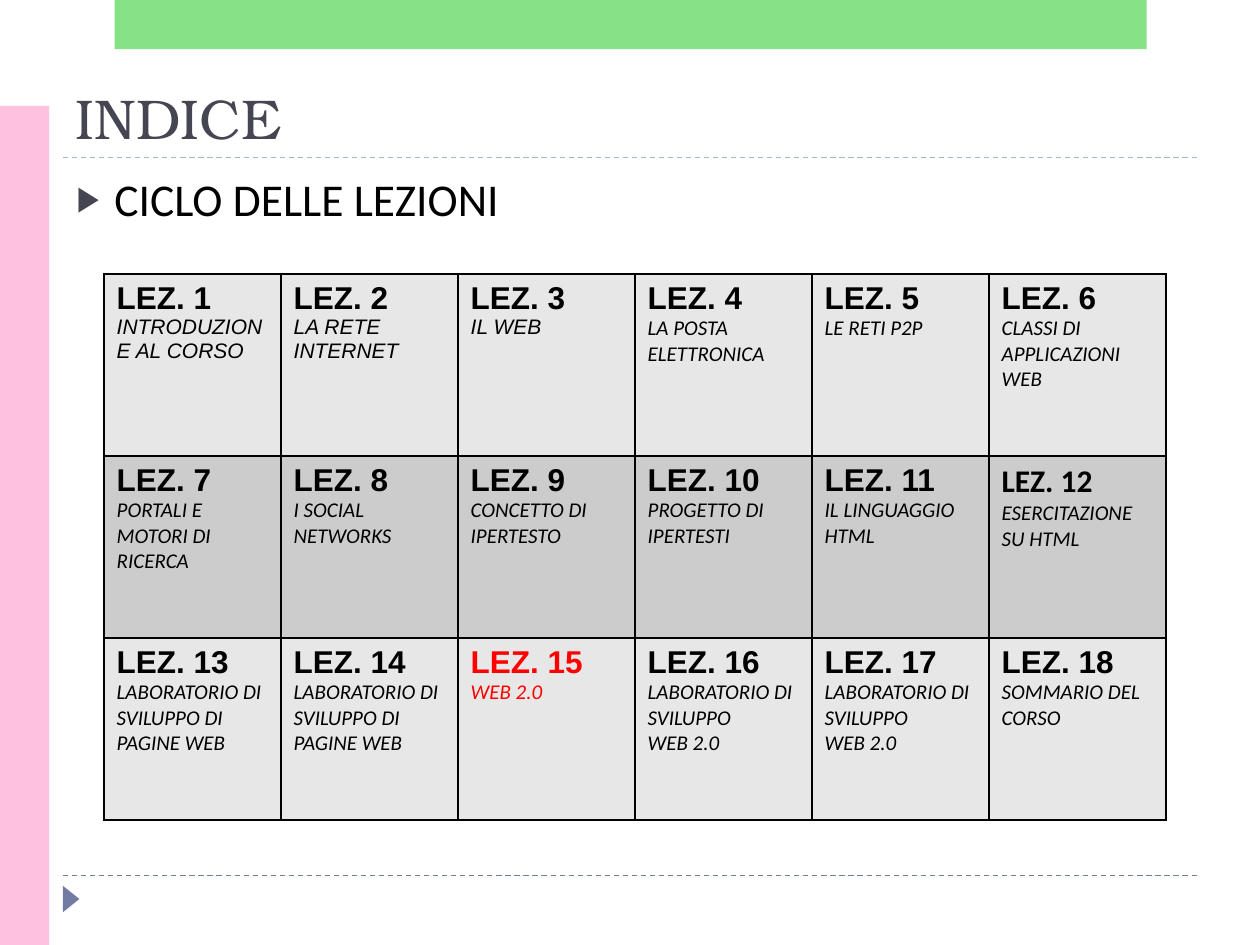
from lxml.etree import SubElement as Sub
from pptx import Presentation
from pptx.dml.color import RGBColor as RGB
from pptx.enum.dml import MSO_LINE as Dash
from pptx.enum.shapes import MSO_CONNECTOR as Conn, MSO_SHAPE as Shape
from pptx.enum.text import MSO_ANCHOR as Anchor, MSO_AUTO_SIZE as Auto, PP_ALIGN as Align
from pptx.oxml.ns import qn
from pptx.util import Pt

HEX = {
    "ink": "000000", "red": "FF0000", "title": "464653", "blue": "727CA3",
    "sky": "9FB8CD", "pink": "FFC1E0", "green": "62D862",
    "light": "E7E7E7", "dark": "CCCCCC",
}
HEAD = {"size": Pt(18), "bold": True, "italic": False}
BODY = {"size": Pt(12), "bold": False, "italic": True}
TOPICS = [
    ["INTRODUZIONE AL CORSO", "LA RETE INTERNET", "IL WEB",
     "LA POSTA ELETTRONICA", "LE RETI P2P", "CLASSI DI APPLICAZIONI WEB"],
    ["PORTALI E MOTORI DI RICERCA", "I SOCIAL NETWORKS", "CONCETTO DI IPERTESTO",
     "PROGETTO DI IPERTESTI", "IL LINGUAGGIO HTML", "ESERCITAZIONE SU HTML"],
    ["LABORATORIO DI SVILUPPO DI PAGINE WEB", "LABORATORIO DI SVILUPPO DI PAGINE WEB",
     "WEB 2.0", "LABORATORIO DI SVILUPPO\vWEB 2.0",
     "LABORATORIO DI SVILUPPO\vWEB 2.0", "SOMMARIO DEL CORSO"],
]


def color(name):
    return RGB.from_string(HEX[name])


def style(obj, form):
    for key, val in form.items():
        setattr(obj, key, val)


def write(para, text, font, tint, form):
    para.text = text
    for run in para.runs:
        style(run.font, {"name": font, **form})
        run.font.color.rgb = color(tint)
    for brk in para._p.findall(qn("a:br")):
        Sub(brk, qn("a:rPr"), sz=str(int(form["size"].pt * 100)))


def block(slide, kind, box, tint, alpha=None, turn=0):
    part = slide.shapes.add_shape(kind, *map(Pt, box))
    part.shadow.inherit = False
    part.rotation = turn
    part.fill.solid()
    part.fill.fore_color.rgb = color(tint)
    part.line.fill.background()
    if alpha:
        clr = part._element.spPr.find(qn("a:solidFill"))[0]
        Sub(clr, qn("a:alpha"), val=str(alpha * 1000))


def rule(slide, left, top, width, tint):
    line = slide.shapes.add_connector(
        Conn.STRAIGHT, Pt(left), Pt(top), Pt(left + width), Pt(top))
    style(line.line, {"width": Pt(0.75), "dash_style": Dash.DASH})
    line.line.color.rgb = color(tint)
    Sub(line._element.spPr, qn("a:effectLst"))


def frame(slide, width, height):
    """Edge bars, dashed rules and the corner marker."""
    rule(slide, 36, height - 39.6, width - 72, "blue")
    rule(slide, 36, 90, width - 72, "sky")
    block(slide, Shape.ISOSCELES_TRIANGLE, (33.1, height - 31, 15.1, 9.4), "blue", turn=90)
    block(slide, Shape.RECTANGLE, (0, 60.5, 28.1, height - 60.5), "pink")
    block(slide, Shape.RECTANGLE, (65.5, 0, 589.7, 28.1), "green", alpha=76)


def title(slide, box):
    head = slide.shapes.title
    style(head, dict(zip(("left", "top", "width", "height"), map(Pt, box))))
    style(head.text_frame, {"vertical_anchor": Anchor.BOTTOM,
                            "auto_size": Auto.NONE, "word_wrap": True})
    para = head.text_frame.paragraphs[0]
    para.alignment = Align.LEFT
    write(para, "INDICE", "TeX Gyre Bonum", "title", {"size": Pt(32)})


def lead(slide, box):
    """Bulleted line above the table."""
    text = slide.shapes.add_textbox(*map(Pt, box)).text_frame
    text.word_wrap = True
    para = text.paragraphs[0]
    props = para._p.get_or_add_pPr()
    props.set("marL", str(Pt(21.6)))
    props.set("indent", str(Pt(-21.6)))
    Sub(Sub(props, qn("a:buClr")), qn("a:srgbClr"), val=HEX["title"])
    Sub(props, qn("a:buSzPct"), val="76000")
    Sub(props, qn("a:buFont"), typeface="Arial")
    Sub(props, qn("a:buChar"), char="▶")
    write(para, "CICLO DELLE LEZIONI", "Calibri", "ink", {"size": Pt(26)})


def border(cell):
    props = cell._tc.get_or_add_tcPr()
    for spot, side in enumerate(("lnL", "lnR", "lnT", "lnB")):
        edge = props.makeelement(qn(f"a:{side}"), {"w": str(Pt(1))})
        Sub(Sub(edge, qn("a:solidFill")), qn("a:srgbClr"), val=HEX["ink"])
        props.insert(spot, edge)


def lessons(slide, box):
    """Numbered lessons; the current one is red."""
    rows, cols = len(TOPICS), len(TOPICS[0])
    grid = slide.shapes.add_table(rows, cols, *map(Pt, box)).table
    for col in grid.columns:
        col.width = Pt(box[2] / cols)
    for row in grid.rows:
        row.height = Pt(box[3] / rows)
    for r, line in enumerate(TOPICS):
        for c, topic in enumerate(line):
            num = r * cols + c + 1
            tint = "red" if num == 15 else "ink"
            cell = grid.cell(r, c)
            cell.fill.solid()
            cell.fill.fore_color.rgb = color("dark" if r % 2 else "light")
            border(cell)
            text = cell.text_frame
            write(text.paragraphs[0], f"LEZ. {num}",
                  "Calibri" if num == 12 else "Arial", tint, HEAD)
            write(text.add_paragraph(), topic,
                  "Arial" if num <= 3 else "Calibri", tint, BODY)


def main():
    deck = Presentation()
    deck.slide_width, deck.slide_height = Pt(720), Pt(540)
    slide = deck.slides.add_slide(deck.slide_layouts[5])
    frame(slide, 720, 540)
    title(slide, (36, 39.6, 648, 50.4))
    lead(slide, (36.7, 94.3, 648, 56.9))
    lessons(slide, (59.5, 156.7, 606.9, 312))
    deck.save("out.pptx")


if __name__ == "__main__":
    main()
